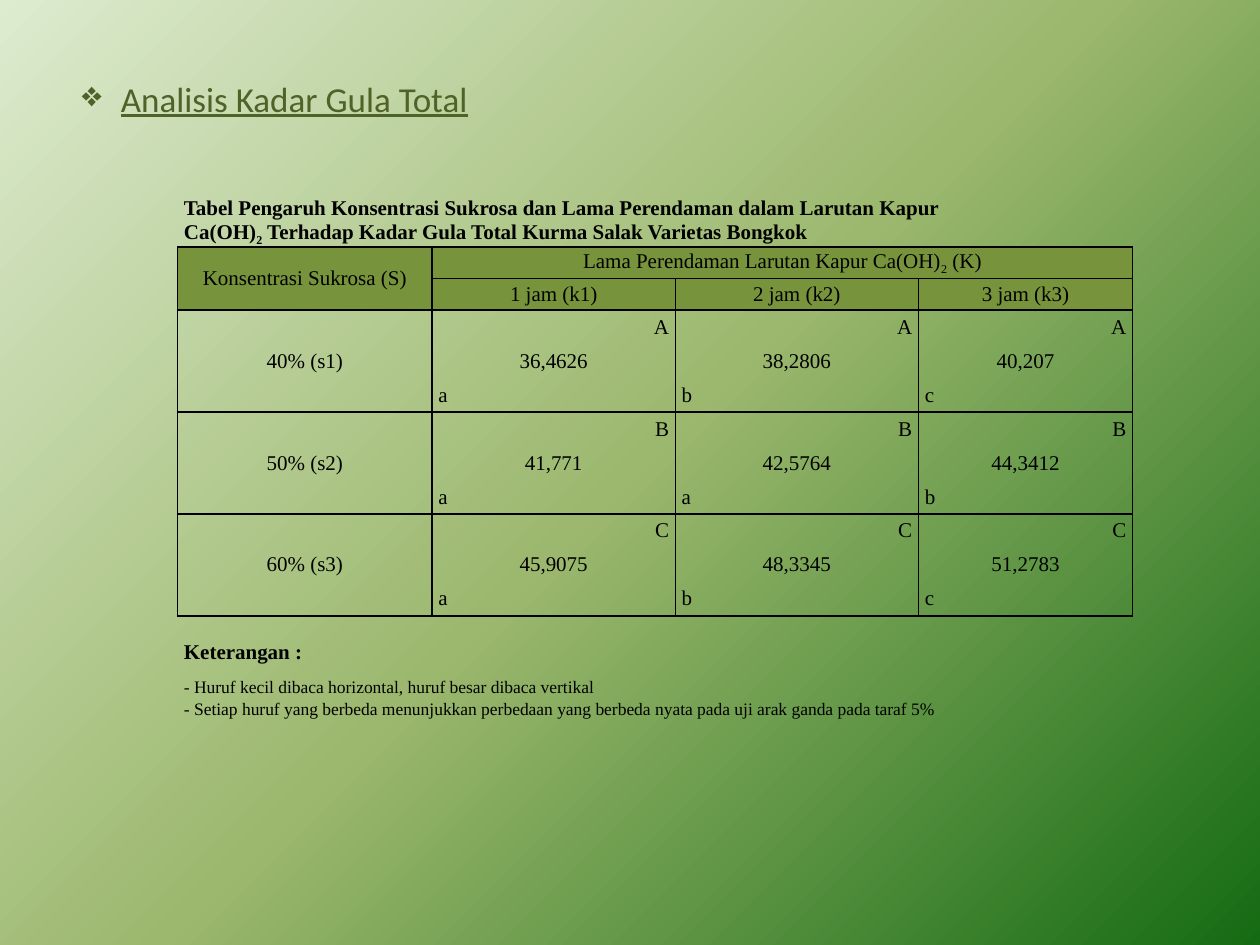
from copy import deepcopy

from lxml import etree
from pptx import Presentation
from pptx import util as u
from pptx.dml import color
from pptx.enum import text
from pptx.oxml import ns

WIDTH, HEIGHT = 10, 7.5
INK, OLIVE, MOSS = "000000", "77933C", "4F6228"
SERIF = "Times New Roman"
NO_GRID_STYLE = "{2D5ABB26-0587-4C30-8999-92F81FD0307C}"
LEFT, CENTER = text.PP_ALIGN.LEFT, text.PP_ALIGN.CENTER
RIGHT, JUSTIFY = text.PP_ALIGN.RIGHT, text.PP_ALIGN.JUSTIFY
MIDDLE, BOTTOM = text.MSO_ANCHOR.MIDDLE, text.MSO_ANCHOR.BOTTOM

COLUMNS = [2.02, 1.93, 1.93, 1.7]
ROWS = [0.19, 0.2] + [0.25] * 2 + [0.27] * 9 + [0.38, 0.27, 0.17]
HEADER_ROW, BODY_ROW, NOTES_ROW = 2, 4, 13
HOURS = ["1 jam (k1)", "2 jam (k2)", "3 jam (k3)"]
GROUPS = [
    ("40% (s1)", "A", ["36,4626", "38,2806", "40,207"], "abc"),
    ("50% (s2)", "B", ["41,771", "42,5764", "44,3412"], "aab"),
    ("60% (s3)", "C", ["45,9075", "48,3345", "51,2783"], "abc"),
]
NOTES = [
    "- Huruf kecil dibaca horizontal, huruf besar dibaca vertikal",
    "- Setiap huruf yang berbeda menunjukkan perbedaan yang berbeda nyata "
    "pada uji arak ganda pada taraf 5%",
]


def rgb(value):
    """Return the colour for a hex string."""
    return color.RGBColor.from_string(value)


def add_run(p, words, size, font, ink, bold=False, subscript=False):
    """Add one formatted run to a paragraph."""
    r = p.add_run()
    r.text = words
    r.font.size, r.font.name, r.font.bold = u.Pt(size), font, bold
    r.font.color.rgb = rgb(ink)
    if subscript:
        r.font._element.set("baseline", "-25000")
    return r


def paint_background(s, stops):
    """Fill the slide with a diagonal gradient of evenly spaced stops."""
    fill = s.background.fill
    fill.gradient()
    fill.gradient_angle = 315
    stop_list = s._element.find(".//" + ns.qn("a:gsLst"))
    while len(stop_list) < len(stops):
        stop_list.append(deepcopy(stop_list[0]))
    for i, (stop, value) in enumerate(zip(fill.gradient_stops, stops)):
        stop.position = i / (len(stops) - 1)
        stop.color.rgb = rgb(value)


def place_title(s, box, words):
    """Place the underlined, bulleted title in its box."""
    sp = s.shapes.title
    sp.left, sp.top, sp.width, sp.height = [u.Inches(v) for v in box]
    tf = sp.text_frame
    tf.word_wrap, tf.vertical_anchor = True, MIDDLE
    p = tf.paragraphs[0]
    p.alignment = LEFT
    add_run(p, words, 20, "Calibri", MOSS).font.underline = True
    props = p._p.get_or_add_pPr()
    props.set("marL", str(u.Inches(0.31)))
    props.set("indent", str(-u.Inches(0.31)))
    etree.SubElement(props, ns.qn("a:buChar")).set("char", "❖")


def rule_cell(cell, sides):
    """Draw one-point rules on the given sides (L, R, T, B) of a cell."""
    props = cell._tc.get_or_add_tcPr()
    for side in "LRTB":
        line = etree.SubElement(props, ns.qn("a:ln" + side), w=str(u.Pt(1)))
        if side in sides:
            solid = etree.SubElement(line, ns.qn("a:solidFill"))
            etree.SubElement(solid, ns.qn("a:srgbClr"), val=INK)
        else:
            etree.SubElement(line, ns.qn("a:noFill"))


def rules_for(row, col):
    """Return the ruled sides of the cell at a row and column."""
    if row < HEADER_ROW:
        return "B" if row == HEADER_ROW - 1 else ""
    if row < BODY_ROW:
        return "LRTB"
    if row < NOTES_ROW:
        return "LR" + ("T", "", "B")[(row - BODY_ROW) % 3]
    return "T" if row == NOTES_ROW else ""


def prepare_cells(table):
    """Give every cell its margins, rules, fill and small empty line."""
    for row in range(len(ROWS)):
        for col in range(len(COLUMNS)):
            cell = table.cell(row, col)
            cell.margin_left = cell.margin_right = u.Inches(0.05)
            cell.margin_top = cell.margin_bottom = 0
            rule_cell(cell, rules_for(row, col))
            if HEADER_ROW <= row < BODY_ROW:
                cell.fill.solid()
                cell.fill.fore_color.rgb = rgb(OLIVE)
            else:
                cell.fill.background()
            end = cell.text_frame.paragraphs[0]._p
            etree.SubElement(end, ns.qn("a:endParaRPr"), sz="1000")


def write(table, row, col, parts, align=CENTER, anchor=MIDDLE,
          span=(1, 1), size=12, bold=False):
    """Write text parts in a cell, every second part as a subscript."""
    cell = table.cell(row, col)
    if span != (1, 1):
        cell.merge(table.cell(row + span[0] - 1, col + span[1] - 1))
    cell.vertical_anchor = anchor
    p = cell.text_frame.paragraphs[0]
    p.alignment = align
    for i, words in enumerate(parts):
        add_run(p, words, size, SERIF, INK, bold, subscript=i % 2 == 1)
    return p


def fill_heading(table):
    """Write the caption rows and the two header rows."""
    write(table, 0, 0, ["Tabel Pengaruh Konsentrasi Sukrosa dan Lama "
                        "Perendaman dalam Larutan Kapur "],
          JUSTIFY, span=(1, 4), bold=True)
    write(table, 1, 0, ["Ca(OH)", "2", " Terhadap Kadar Gula Total Kurma "
                        "Salak Varietas Bongkok"],
          JUSTIFY, BOTTOM, (1, 4), bold=True)
    write(table, HEADER_ROW, 0, ["Konsentrasi Sukrosa (S)"], span=(2, 1))
    write(table, HEADER_ROW, 1,
          ["Lama Perendaman Larutan Kapur Ca(OH)", "2", " (K)"], span=(1, 3))
    for col, hour in enumerate(HOURS, 1):
        write(table, HEADER_ROW + 1, col, [hour])


def fill_body(table):
    """Write each concentration with its letters and values."""
    for i, (label, capital, values, letters) in enumerate(GROUPS):
        row = BODY_ROW + 3 * i
        write(table, row, 0, [label], span=(3, 1))
        for col, (value, letter) in enumerate(zip(values, letters), 1):
            write(table, row, col, [capital], RIGHT)
            write(table, row + 1, col, [value])
            write(table, row + 2, col, [letter], JUSTIFY)


def fill_notes(table):
    """Write the explanation rows under the body."""
    p = write(table, NOTES_ROW, 0, ["Keterangan : "], JUSTIFY, BOTTOM,
              (1, 2), bold=True)
    p.line_spacing = 2.0
    for row, note in enumerate(NOTES, NOTES_ROW + 1):
        write(table, row, 0, [note], JUSTIFY, BOTTOM, (1, 4), size=10)


def place_table(s, left, top):
    """Place the sugar content table at a corner."""
    box = (left, top, sum(COLUMNS), sum(ROWS))
    frame = s.shapes.add_table(len(ROWS), len(COLUMNS),
                               *[u.Inches(v) for v in box])
    table = frame.table
    table.first_row = table.horz_banding = False
    table._tbl.tblPr.find(ns.qn("a:tableStyleId")).text = NO_GRID_STYLE
    for column, width in zip(table.columns, COLUMNS):
        column.width = u.Inches(width)
    for row, height in zip(table.rows, ROWS):
        row.height = u.Inches(height)
    prepare_cells(table)
    fill_heading(table)
    fill_body(table)
    fill_notes(table)


def main():
    """Build and save the slide."""
    prs = Presentation()
    prs.slide_width, prs.slide_height = u.Inches(WIDTH), u.Inches(HEIGHT)
    s = prs.slides.add_slide(prs.slide_layouts[5])
    paint_background(s, ["DDEBCF", "9CB86E", "156B13"])
    place_title(s, (0.055 * WIDTH, 0.47, 0.85 * WIDTH, 0.62),
                "Analisis Kadar Gula Total")
    place_table(s, 1.41, 1.56)
    prs.save("out.pptx")


if __name__ == "__main__":
    main()
